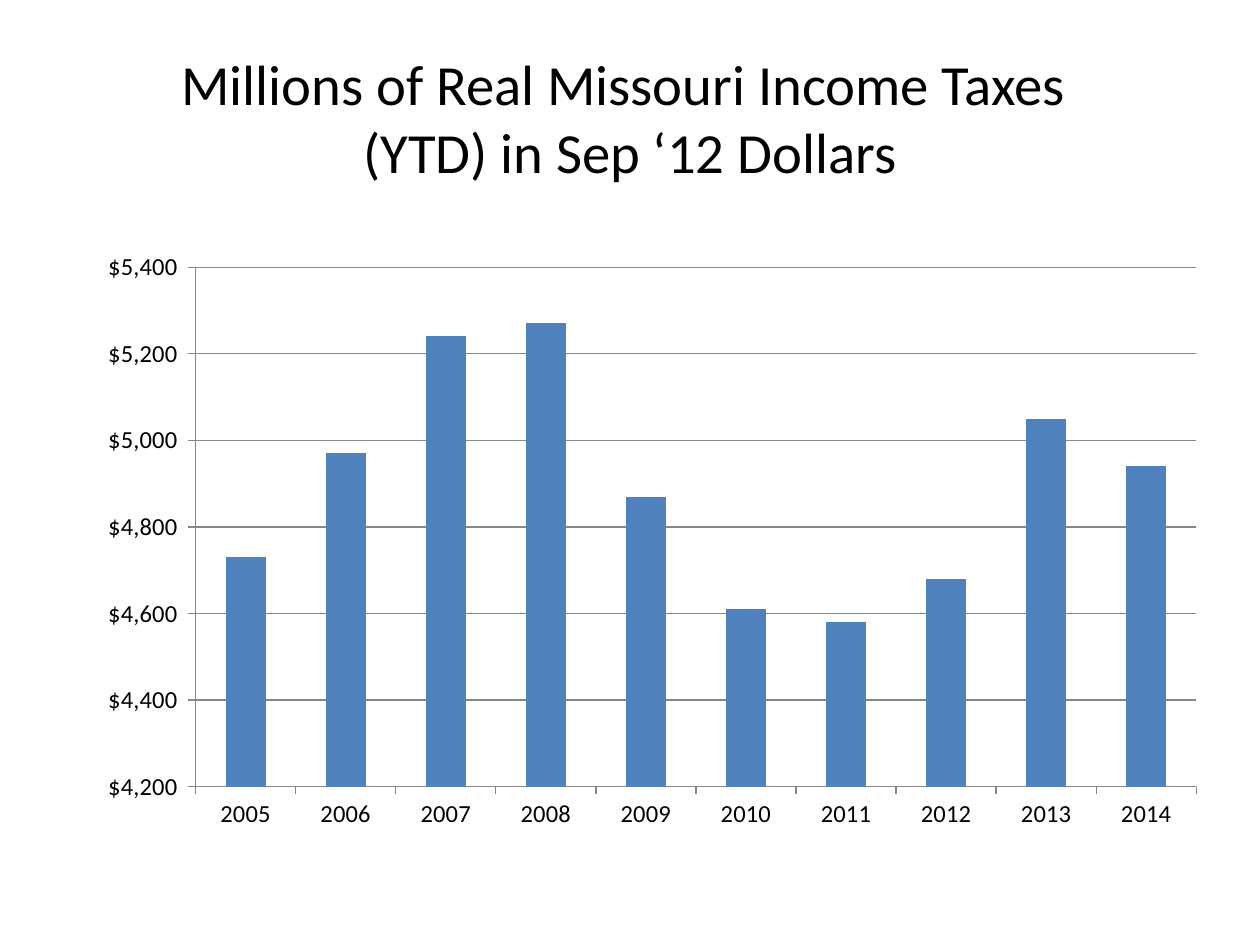
from dataclasses import dataclass

from lxml.etree import SubElement
from pptx import Presentation
from pptx.chart.data import CategoryChartData
from pptx.dml.color import RGBColor
from pptx.enum.chart import XL_CHART_TYPE as ChartType, XL_TICK_MARK as Tick
from pptx.enum.text import MSO_ANCHOR as Anchor, PP_ALIGN as Align
from pptx.oxml.ns import qn
from pptx.util import Inches, Pt

TITLE = "Millions of Real Missouri Income Taxes \v(YTD) in Sep ‘12 Dollars"
INCOME_TAXES = {
    "2005": 4730, "2006": 4970, "2007": 5240, "2008": 5270, "2009": 4870,
    "2010": 4610, "2011": 4580, "2012": 4680, "2013": 5050, "2014": 4940,
}
TAX_RANGE = (4200, 5400, 200)
PLOT_AREA = {"x": 0.117, "y": 0.075, "w": 0.883, "h": 0.833}


@dataclass(frozen=True)
class Theme:
    font: str = "Calibri"
    text: RGBColor = RGBColor(0, 0, 0)
    bar: RGBColor = RGBColor(0x4F, 0x81, 0xBD)
    line: RGBColor = RGBColor(0x86, 0x86, 0x86)
    title_size: Pt = Pt(32.4)
    axis_size: Pt = Pt(14)
    line_width: Pt = Pt(0.75)


THEME = Theme()


def style_font(font, size):
    font.name = THEME.font
    font.size = size
    font.color.rgb = THEME.text


def style_line(line):
    line.color.rgb = THEME.line
    line.width = THEME.line_width


def add_title(slide):
    frame = slide.shapes.add_textbox(
        Inches(0.5), Inches(0.3), Inches(9), Inches(1.25)).text_frame
    frame.word_wrap = True
    frame.vertical_anchor = Anchor.MIDDLE
    heading = frame.paragraphs[0]
    heading.text = TITLE
    heading.alignment = Align.CENTER
    style_font(heading.font, THEME.title_size)


def set_plot_area(chart):
    """Fix the inner plot area as fractions of the chart frame."""
    plot_area = chart.element.find(".//" + qn("c:plotArea"))
    layout = plot_area.find(qn("c:layout"))
    if layout is None:
        layout = SubElement(plot_area, qn("c:layout"))
        plot_area.insert(0, layout)
    manual = SubElement(layout, qn("c:manualLayout"))
    settings = {"layoutTarget": "inner", "xMode": "edge", "yMode": "edge", **PLOT_AREA}
    for tag, value in settings.items():
        SubElement(manual, qn(f"c:{tag}")).set("val", str(value))


def add_tax_chart(slide):
    taxes = CategoryChartData()
    taxes.categories = list(INCOME_TAXES)
    taxes.add_series("Series 1", list(INCOME_TAXES.values()))
    chart = slide.shapes.add_chart(
        ChartType.COLUMN_CLUSTERED,
        Inches(0.5), Inches(1.75), Inches(9), Inches(4.95), taxes).chart
    chart.has_title = False
    chart.has_legend = False
    style_font(chart.font, THEME.axis_size)
    set_plot_area(chart)

    bars = chart.plots[0]
    bars.gap_width = 150
    bars.vary_by_categories = False
    fill = bars.series[0].format.fill
    fill.solid()
    fill.fore_color.rgb = THEME.bar

    years, dollars = chart.category_axis, chart.value_axis
    for axis in (years, dollars):
        axis.major_tick_mark = Tick.OUTSIDE
        axis.minor_tick_mark = Tick.NONE
        style_font(axis.tick_labels.font, THEME.axis_size)
        style_line(axis.format.line)
    dollars.minimum_scale, dollars.maximum_scale, dollars.major_unit = TAX_RANGE
    dollars.has_major_gridlines = True
    style_line(dollars.major_gridlines.format.line)
    dollars.tick_labels.number_format = '"$"#,##0_)'
    dollars.tick_labels.number_format_is_linked = False


def main():
    deck = Presentation()
    deck.slide_width, deck.slide_height = Inches(10), Inches(7.5)
    slide = deck.slides.add_slide(deck.slide_layouts[6])
    add_title(slide)
    add_tax_chart(slide)
    deck.save("out.pptx")


if __name__ == "__main__":
    main()
